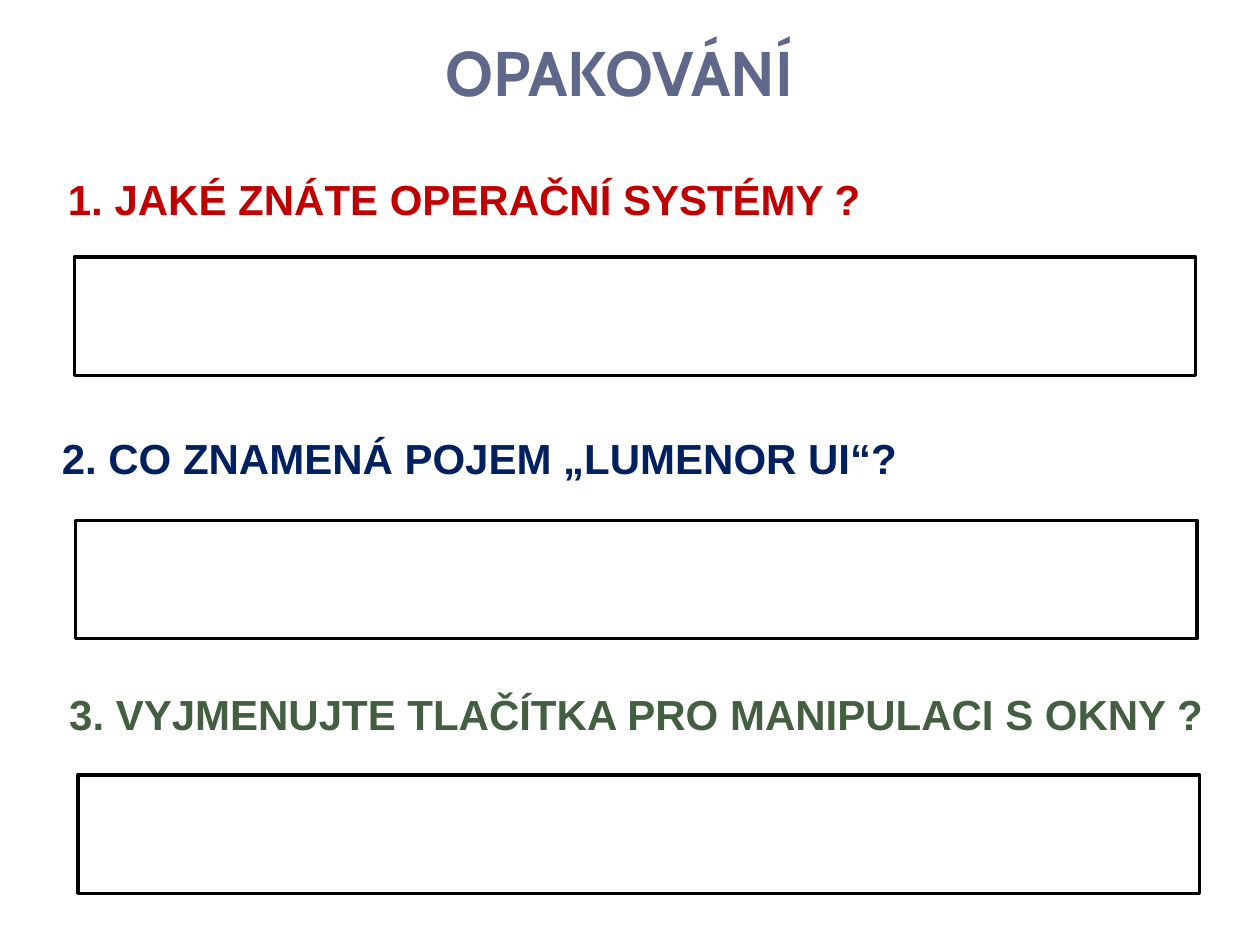
import pptx
import pptx.dml.color
import pptx.enum.shapes
import pptx.enum.text
import pptx.util

theme = {
    "title_font": "Cabin", "title_size": 36, "title_color": "5F688B",
    "body_font": "Arial", "body_size": 24,
    "question_colors": ["C00000", "002060", "435E40"],
    "line_spacing": 20, "answer_fill": "FFFFFF",
    "answer_line": "000000", "line_width": 2,
}

deck = pptx.Presentation()
deck.slide_width = pptx.util.Inches(10)
deck.slide_height = pptx.util.Inches(7.5)
column = deck.slide_width / 100
row = deck.slide_height / 75
slide = deck.slides.add_slide(deck.slide_layouts[5])


def place(left, top, width, height):
    return [round(left * column), round(top * row), round(width * column), round(height * row)]


def write(box, text, font, size, color):
    frame = box.text_frame
    frame.word_wrap = True
    frame.auto_size = pptx.enum.text.MSO_AUTO_SIZE.NONE
    frame.vertical_anchor = pptx.enum.text.MSO_ANCHOR.BOTTOM
    para = frame.paragraphs[0]
    para.text = text
    para.alignment = pptx.enum.text.PP_ALIGN.CENTER
    para.line_spacing = pptx.util.Pt(theme["line_spacing"])
    para.space_before = pptx.util.Pt(0)
    para.font.name = font
    para.font.size = pptx.util.Pt(size)
    para.font.bold = True
    para.font.color.rgb = pptx.dml.color.RGBColor.from_string(color)


title = slide.shapes.title
title.left, title.top, title.width, title.height = place(3.5, 2.4, 91.3, 6.8)
write(title, "OPAKOVÁNÍ", theme["title_font"], theme["title_size"], theme["title_color"])

questions = [
    ("1. JAKÉ ZNÁTE OPERAČNÍ SYSTÉMY ?", (3, 11.5, 67.7), (5.9, 20.4)),
    ("2. CO ZNAMENÁ POJEM „LUMENOR UI“?", (3, 32, 70.1), (6, 41.3)),
    ("3. VYJMENUJTE TLAČÍTKA PRO MANIPULACI S OKNY ?", (3.5, 52.3, 94), (6.2, 61.5)),
]

for (text, question_place, answer_place), color in zip(questions, theme["question_colors"]):
    question = slide.shapes.add_textbox(*place(*question_place, 6.8))
    write(question, text, theme["body_font"], theme["body_size"], color)

    answer = slide.shapes.add_shape(
        pptx.enum.shapes.MSO_SHAPE.RECTANGLE, *place(*answer_place, 89, 9.4))
    answer.shadow.inherit = False
    answer.fill.solid()
    answer.fill.fore_color.rgb = pptx.dml.color.RGBColor.from_string(theme["answer_fill"])
    answer.line.color.rgb = pptx.dml.color.RGBColor.from_string(theme["answer_line"])
    answer.line.width = pptx.util.Pt(theme["line_width"])

deck.save("out.pptx")
